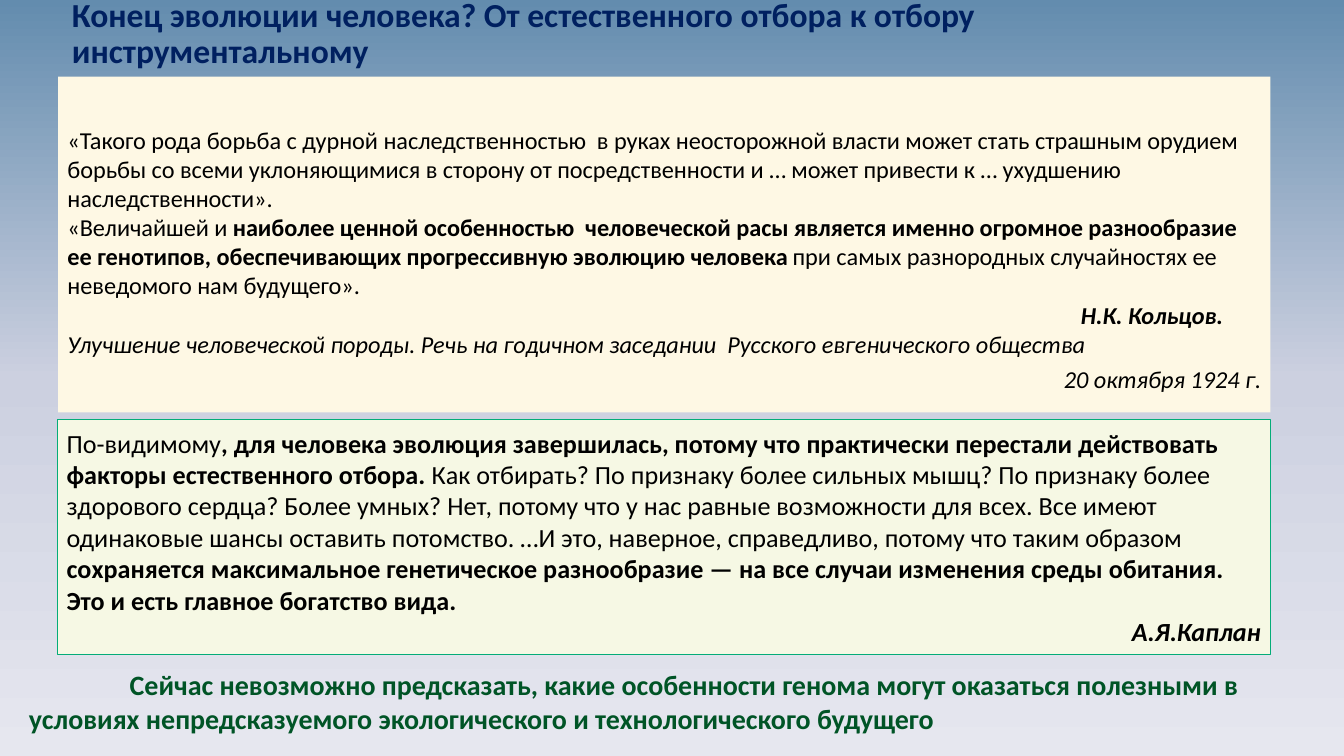
from copy import deepcopy

from pptx import Presentation
from pptx.dml.color import RGBColor
from pptx.enum.shapes import MSO_SHAPE
from pptx.enum.text import MSO_ANCHOR, MSO_AUTO_SIZE, PP_ALIGN
from pptx.util import Inches, Pt

LEFT, RIGHT = PP_ALIGN.LEFT, PP_ALIGN.RIGHT
TOP, MIDDLE = MSO_ANCHOR.TOP, MSO_ANCHOR.MIDDLE
RECTANGLE = MSO_SHAPE.RECTANGLE
NO_AUTOFIT = MSO_AUTO_SIZE.NONE

BLACK = RGBColor(0x00, 0x00, 0x00)
NAVY = RGBColor(0x00, 0x20, 0x60)
GREEN = RGBColor(0x00, 0x54, 0x26)
CREAM = RGBColor(0xFE, 0xF8, 0xE4)
PALE_GREEN = RGBColor(0xF6, 0xF8, 0xE4)
EMERALD = RGBColor(0x04, 0xAC, 0x78)
SKY = [RGBColor(0x63, 0x8C, 0xAE), RGBColor(0xCC, 0xD0, 0xE0), RGBColor(0xE6, 0xE7, 0xEF)]

PLAIN, BOLD, ITALIC, BOLD_ITALIC = (False, False), (True, False), (False, True), (True, True)

deck = Presentation()
deck.slide_width = Inches(10)
deck.slide_height = deck.slide_width * 9 // 16
page = deck.slides.add_slide(deck.slide_layouts[5])


def area(left, top, width, height):
    """Turn percentages of the slide into lengths."""
    across, down = deck.slide_width / 100, deck.slide_height / 100
    return int(left * across), int(top * down), int(width * across), int(height * down)


def write(box, paragraphs, size, color, anchor=TOP, top_inset=0.04):
    """Fill a box with (alignment, [(text, (bold, italic)), ...]) paragraphs."""
    frame = box.text_frame
    frame.word_wrap = True
    frame.auto_size = NO_AUTOFIT
    frame.vertical_anchor = anchor
    frame.margin_left = frame.margin_right = Inches(0.07)
    frame.margin_top, frame.margin_bottom = Inches(top_inset), Inches(0.04)
    for number, (alignment, spans) in enumerate(paragraphs):
        para = frame.add_paragraph() if number else frame.paragraphs[0]
        para.alignment = alignment
        for text, (bold, italic) in spans:
            span = para.add_run()
            span.text = text
            span.font.name, span.font.size = "Calibri", Pt(size)
            span.font.bold, span.font.italic = bold, italic
            span.font.color.rgb = color
    return frame.paragraphs


# Background: three stops from top to bottom
sky = page.background.fill
sky.gradient()
sky.gradient_angle = 270
first_stop = page.background._cSld.xpath(".//a:gs")[0]
first_stop.addnext(deepcopy(first_stop))
for number, (stop, color) in enumerate(zip(sky.gradient_stops, SKY)):
    stop.position = number / 2
    stop.color.rgb = color

# Title
title = page.shapes.title
title.left, title.top, title.width, title.height = area(4.65, 0, 91.1, 9.07)
heading = write(title, [
    (LEFT, [("Конец эволюции человека? От естественного отбора к отбору инструментальному", BOLD)]),
], 18, NAVY, MIDDLE)
heading[0].line_spacing = 0.9

# Quotation panels
koltsov = page.shapes.add_shape(RECTANGLE, *area(4.32, 10.13, 90.2, 44.44))
kaplan = page.shapes.add_shape(RECTANGLE, *area(4.25, 55.47, 90.27, 31.11))
for panel, color in ((koltsov, CREAM), (kaplan, PALE_GREEN)):
    panel.shadow.inherit = False
    panel.fill.solid()
    panel.fill.fore_color.rgb = color
koltsov.line.fill.background()
kaplan.line.color.rgb = EMERALD
kaplan.line.width = Pt(0.25)

quote = write(koltsov, [
    (LEFT, [("«Такого рода борьба с дурной наследственностью  в руках неосторожной власти может "
             "стать страшным орудием борьбы со всеми уклоняющимися в сторону от посредственности "
             "и … может привести к … ухудшению наследственности».", PLAIN)]),
    (LEFT, [("«Величайшей и ", PLAIN),
            ("наиболее ценной особенностью  человеческой расы является именно огромное "
             "разнообразие ее генотипов, обеспечивающих прогрессивную эволюцию человека ", BOLD),
            ("при самых разнородных случайностях ее неведомого нам будущего».", PLAIN)]),
    (LEFT, [("Н.К. Кольцов.", BOLD_ITALIC)]),
    (LEFT, [("Улучшение человеческой породы. Речь на годичном заседании  Русского "
             "евгенического общества", ITALIC)]),
    (RIGHT, [("20 октября 1924 г.", ITALIC)]),
], 13, BLACK, top_inset=0.36)
author, date = quote[2], quote[4]
author._p.get_or_add_pPr().set("marL", str(Inches(7.54)))
date.line_spacing = 0.7
date.space_before = Pt(7.5)

write(kaplan, [
    (LEFT, [("По-видимому", PLAIN),
            (", для человека эволюция завершилась, потому что практически перестали "
             "действовать факторы естественного отбора.", BOLD),
            (" Как отбирать? По признаку более сильных мышц? По признаку более здорового "
             "сердца? Более умных? Нет, потому что у нас равные возможности для всех. Все "
             "имеют одинаковые шансы оставить потомство. …И это, наверное, справедливо, "
             "потому что таким образом ", PLAIN),
            ("сохраняется максимальное генетическое разнообразие — на все случаи изменения "
             "среды обитания. Это и есть главное богатство вида.", BOLD)]),
    (RIGHT, [("А.Я.Каплан", BOLD_ITALIC)]),
], 14, BLACK, MIDDLE)

# Conclusion with an indented first line
conclusion = page.shapes.add_textbox(*area(1.45, 87.64, 96.1, 10.31))
closing = write(conclusion, [
    (LEFT, [("Сейчас невозможно предсказать, какие особенности генома могут оказаться "
             "полезными в условиях непредсказуемого экологического и технологического "
             "будущего", BOLD)]),
], 15, GREEN)
closing[0]._p.get_or_add_pPr().set("indent", str(Inches(0.75)))

deck.save("out.pptx")
